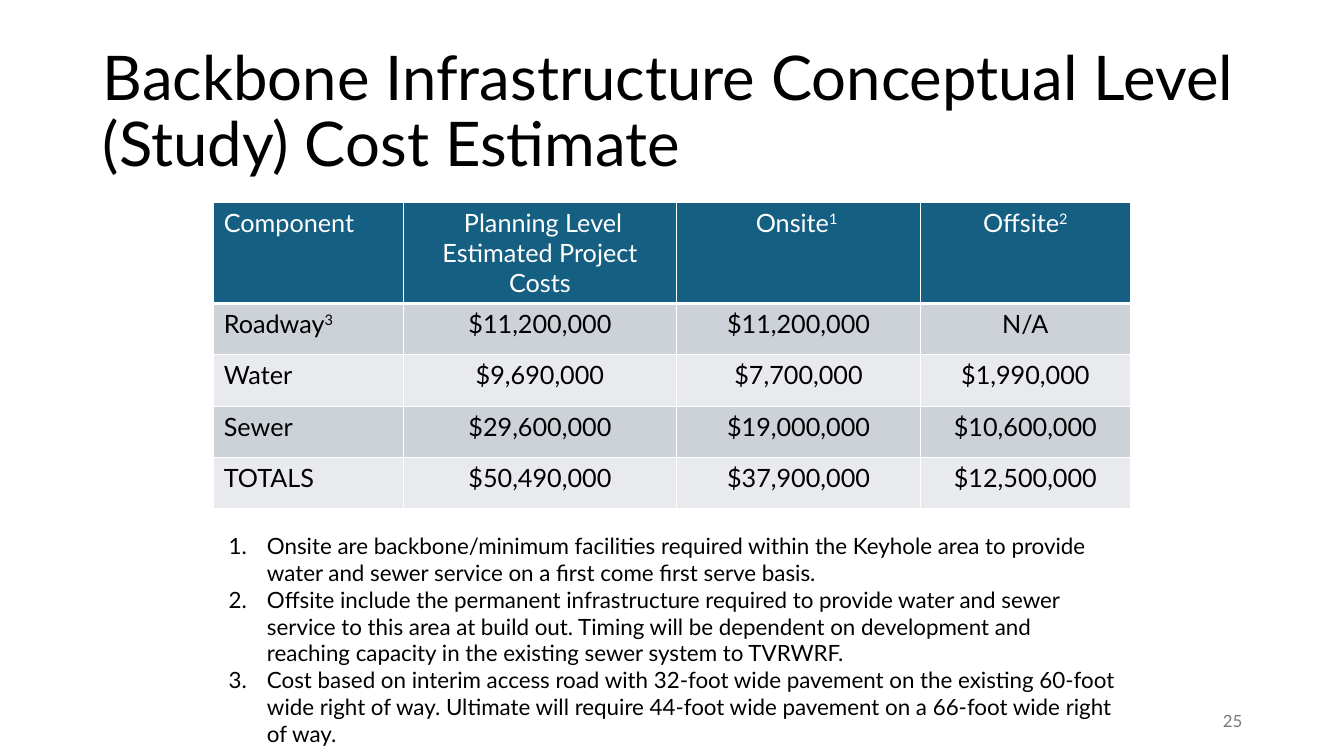
from lxml import etree
from pptx import Presentation
from pptx import util as u
from pptx.dml.color import RGBColor
from pptx.enum import text
from pptx.oxml import ns

WIDE, HIGH = u.Inches(13.33), u.Inches(7.5)
FACE = "Lato"
BLACK = RGBColor(0x00, 0x00, 0x00)
WHITE = RGBColor(0xFF, 0xFF, 0xFF)
TEAL = RGBColor(0x15, 0x60, 0x82)
GRAY = RGBColor(0x79, 0x79, 0x79)
BANDS = RGBColor(0xCC, 0xD2, 0xD8), RGBColor(0xE8, 0xEA, 0xED)
LEFT, MID, RIGHT = text.PP_ALIGN.LEFT, text.PP_ALIGN.CENTER, text.PP_ALIGN.RIGHT

TITLE = "Backbone Infrastructure Conceptual Level (Study) Cost Estimate"
COLS = 1.88, 2.71, 2.42, 2.08
ROWS = 1.0, 0.51, 0.51, 0.51, 0.51
COSTS = [
    ("Component", " Planning Level Estimated Project Costs", "Onsite^1 ", "Offsite^2"),
    ("Roadway^3", "$11,200,000", "$11,200,000", "N/A"),
    ("Water", "$9,690,000", "$7,700,000", "$1,990,000"),
    ("Sewer", "$29,600,000", "$19,000,000", "$10,600,000"),
    ("TOTALS", "$50,490,000", "$37,900,000", "$12,500,000"),
]
NOTES = [
    "Onsite are backbone/minimum facilities required within the Keyhole area to provide "
    "water and sewer service on a first come first serve basis.",
    "Offsite include the permanent infrastructure required to provide water and sewer "
    "service to this area at build out. Timing will be dependent on development and "
    "reaching capacity in the existing sewer system to TVRWRF.",
    "Cost based on interim access road with 32-foot wide pavement on the existing 60-foot "
    "wide right of way. Ultimate will require 44-foot wide pavement on a 66-foot wide "
    "right of way.",
]


def style(para, size, color, align=LEFT):
    """Set the font and alignment of a paragraph."""
    font = para.font
    font.name, font.size, font.bold = FACE, u.Pt(size), False
    font.color.rgb = color
    para.alignment = align


def place(shape, left, top, width, height):
    """Place a shape by lengths in inches."""
    shape.left, shape.top = u.Inches(left), u.Inches(top)
    shape.width, shape.height = u.Inches(width), u.Inches(height)


def add_box(slide, *area):
    """Add a wrapping text box and return its text frame."""
    frame = slide.shapes.add_textbox(*map(u.Inches, area)).text_frame
    frame.word_wrap = True
    return frame


def edge(cell, base):
    """Draw white cell borders with the given bottom width in points."""
    props = cell._tc.get_or_add_tcPr()
    for side, width in zip("LRTB", (1, 1, 1, base)):
        line = etree.SubElement(props, ns.qn(f"a:ln{side}"), w=str(u.Pt(width)))
        fill = etree.SubElement(line, ns.qn("a:solidFill"))
        etree.SubElement(fill, ns.qn("a:srgbClr"), val=str(WHITE))


def fill_cell(cell, words, row, col):
    """Write one table cell, raising the mark that follows a caret."""
    head = row == 0
    edge(cell, 3 if head else 1)
    cell.fill.solid()
    cell.fill.fore_color.rgb = TEAL if head else BANDS[(row - 1) % 2]
    para = cell.text_frame.paragraphs[0]
    body, _, mark = words.partition("^")
    para.add_run().text = body
    if mark:
        run = para.add_run()
        run.text = mark
        run._r.get_or_add_rPr().set("baseline", "30000")
    style(para, 18, WHITE if head else BLACK, MID if col else LEFT)


def add_title(slide):
    """Fill and place the title."""
    shape = slide.shapes.title
    place(shape, 0.92, 0.4, 11.5, 1.45)
    frame = shape.text_frame
    frame.text = TITLE
    frame.auto_size = text.MSO_AUTO_SIZE.NONE
    frame.vertical_anchor = text.MSO_ANCHOR.MIDDLE
    para = frame.paragraphs[0]
    para.line_spacing = 0.9
    style(para, 44, BLACK)


def add_costs(slide):
    """Add the cost table."""
    area = 2.12, 2.01, sum(COLS), sum(ROWS)
    table = slide.shapes.add_table(len(ROWS), len(COLS), *map(u.Inches, area)).table
    for col, width in zip(table.columns, COLS):
        col.width = u.Inches(width)
    for row, height in zip(table.rows, ROWS):
        row.height = u.Inches(height)
    for r, line in enumerate(COSTS):
        for c, words in enumerate(line):
            fill_cell(table.cell(r, c), words, r, c)


def add_notes(slide):
    """Add the numbered notes under the table."""
    frame = add_box(slide, 2.17, 5.23, 9, 2.26)
    frame.auto_size = text.MSO_AUTO_SIZE.SHAPE_TO_FIT_TEXT
    for i, note in enumerate(NOTES):
        para = frame.add_paragraph() if i else frame.paragraphs[0]
        para.text = note
        props = para._p.get_or_add_pPr()
        props.set("marL", str(u.Inches(0.38)))
        props.set("indent", str(-u.Inches(0.38)))
        etree.SubElement(props, ns.qn("a:buFont"), typeface="+mj-lt")
        etree.SubElement(props, ns.qn("a:buAutoNum"), type="arabicPeriod")
        style(para, 16, BLACK)


def add_page(slide):
    """Add the page number."""
    frame = add_box(slide, 9.42, 6.95, 3, 0.4)
    frame.vertical_anchor = text.MSO_ANCHOR.MIDDLE
    frame.text = "25"
    style(frame.paragraphs[0], 12, GRAY, RIGHT)


def main():
    """Build and save the slide."""
    deck = Presentation()
    deck.slide_width, deck.slide_height = WIDE, HIGH
    slide = deck.slides.add_slide(deck.slide_layouts[5])
    add_title(slide)
    add_costs(slide)
    add_notes(slide)
    add_page(slide)
    deck.save("out.pptx")


if __name__ == "__main__":
    main()
